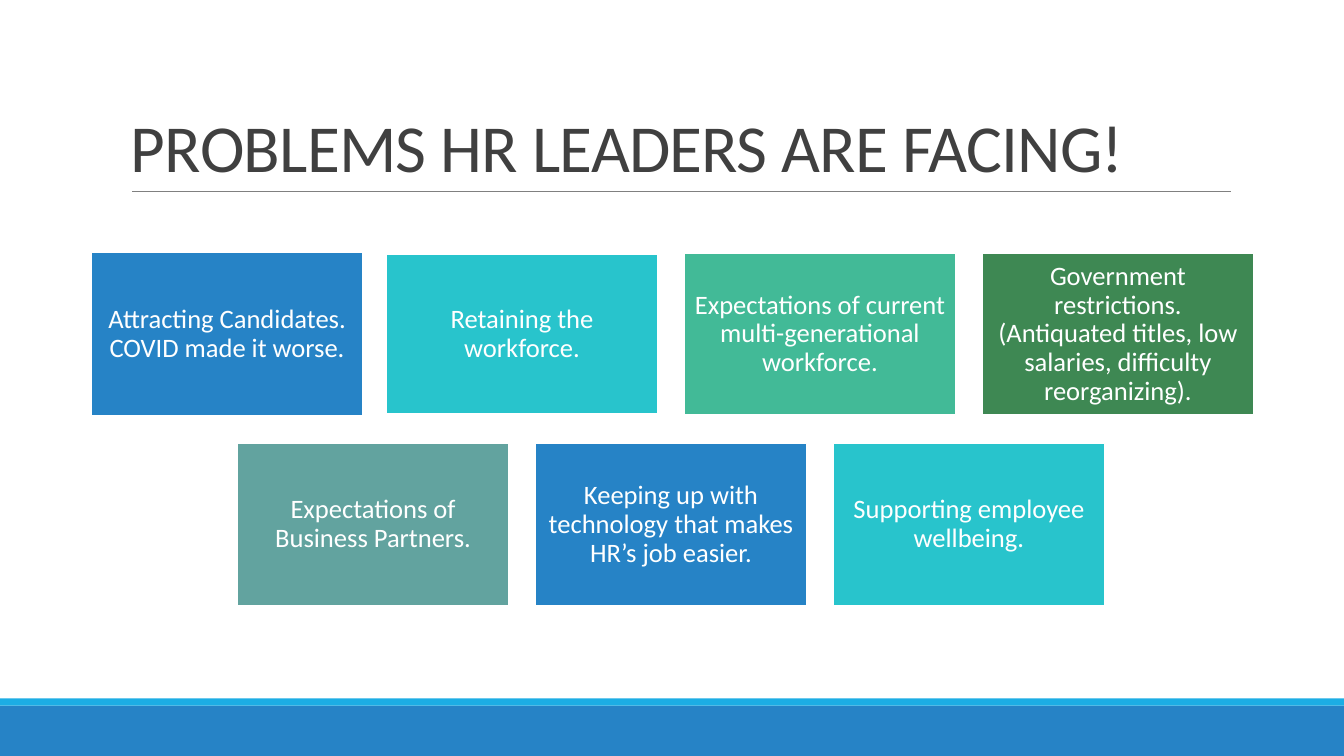
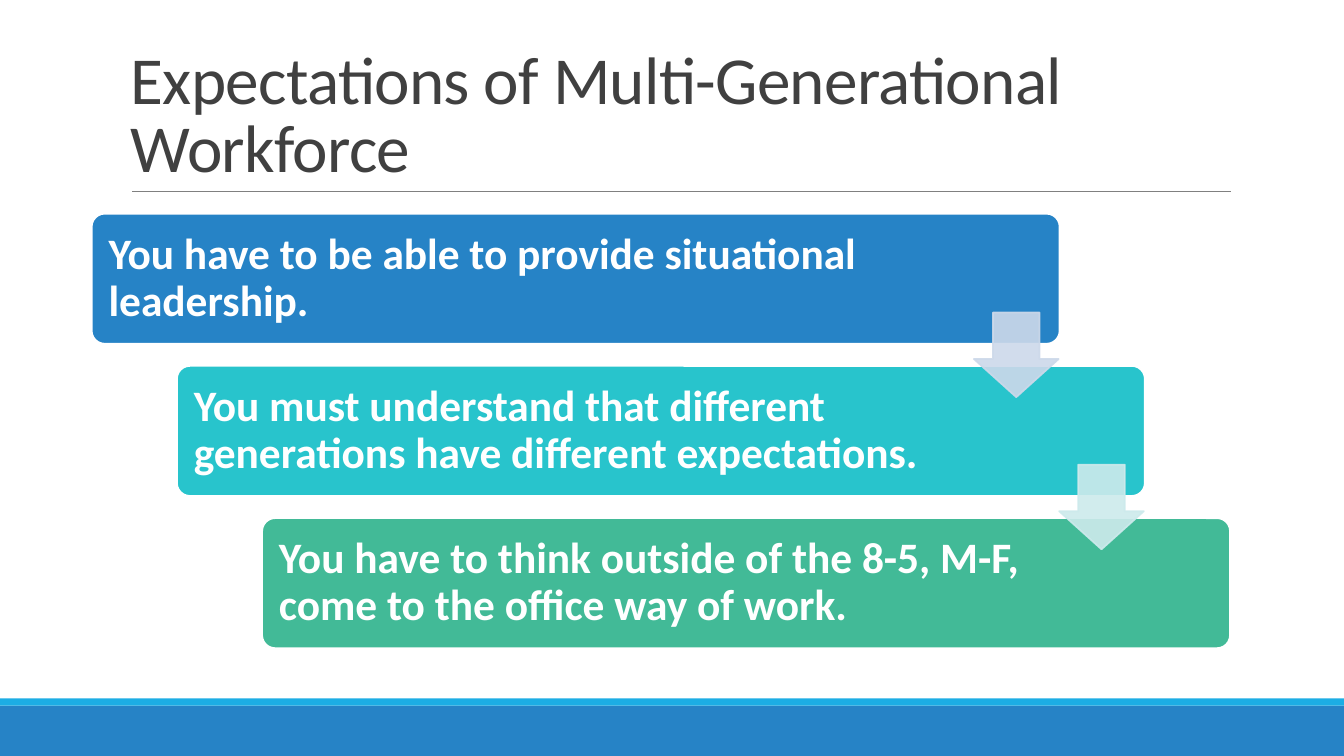
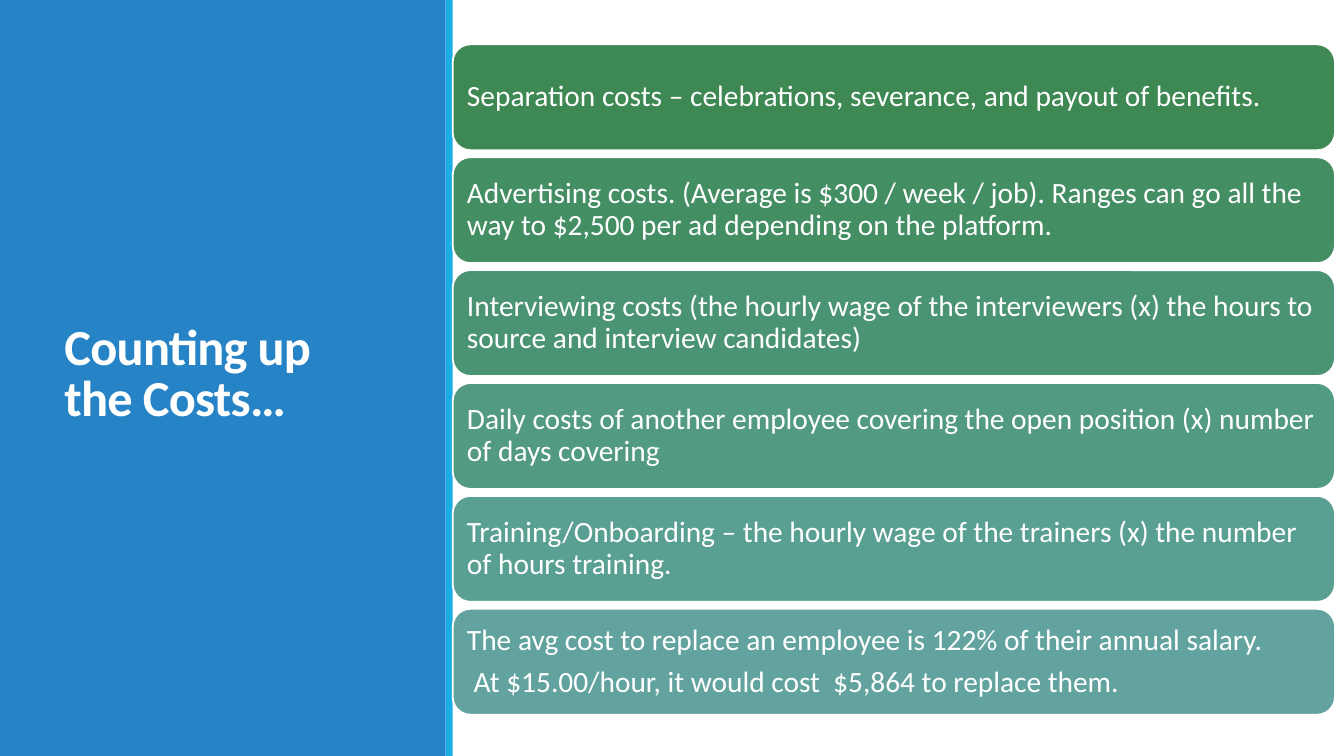
from lxml import etree
from pptx import Presentation
from pptx.dml.color import RGBColor
from pptx.enum import shapes, text
from pptx.oxml import ns
from pptx.util import Inches, Pt

# Shared look
WIDTH, HEIGHT = 13.33, 7.5
FONT = "Calibri"
COLORS = {
    "white": "FFFFFF", "title": "404040", "rule": "808080",
    "blue": "2683C6", "sky": "1CADE4", "teal": "28C4CC",
    "mint": "42BA97", "green": "3E8853", "sage": "62A39F",
    "green 2": "448E63", "green 3": "4B9473", "green 4": "529A83",
    "green 5": "599F92", "pale blue": "CDD9EA", "pale teal": "CDEAEC",
}
STRIPE = 0.07
SHAPE = shapes.MSO_SHAPE
MIDDLE, BOTTOM = text.MSO_ANCHOR.MIDDLE, text.MSO_ANCHOR.BOTTOM
CENTER, LEFT = text.PP_ALIGN.CENTER, text.PP_ALIGN.LEFT

# Content
PROBLEMS_TITLE = "PROBLEMS HR LEADERS ARE FACING!"
PROBLEM_ROWS = [  # row centre, then cards: text, colour, height, shift to the right
    (3.315, [
        ("Attracting Candidates. COVID made it worse.", "blue", 1.63, 0.03),
        ("Retaining the workforce.", "teal", 1.58, 0),
        ("Expectations of current multi-generational workforce.", "mint", 1.61, 0),
        ("Government restrictions. (Antiquated titles, low salaries, "
         "difficulty reorganizing).", "green", 1.61, 0),
    ]),
    (5.205, [
        ("Expectations of Business Partners.", "sage", 1.61, 0),
        ("Keeping up with technology that makes HR’s job easier.", "blue", 1.61, 0),
        ("Supporting employee wellbeing.", "teal", 1.61, 0),
    ]),
]

EXPECTATIONS_TITLE = "Expectations of Multi-Generational Workforce"
EXPECTATIONS = [  # text, colour, right margin, colour of the arrow to the next step
    ("You have to be able to provide situational leadership.",
     "blue", 1.45, "pale blue"),
    ("You must understand that different generations have different expectations.",
     "teal", 1.83, "pale teal"),
    ("You have to think outside of the 8-5, M-F, come to the office way of work.",
     "mint", 1.83, None),
]

COSTS_TITLE = "Counting up the Costs…"
COSTS = [
    ("Separation costs – celebrations, severance, and payout of benefits.", "green"),
    ("Advertising costs. (Average is $300 / week / job). Ranges can go all the way "
     "to $2,500 per ad depending on the platform.", "green 2"),
    ("Interviewing costs (the hourly wage of the interviewers (x) the hours to "
     "source and interview candidates)", "green 3"),
    ("Daily costs of another employee covering the open position (x) number of "
     "days covering", "green 4"),
    ("Training/Onboarding – the hourly wage of the trainers (x) the number of "
     "hours training.", "green 5"),
    ("The avg cost to replace an employee is 122% of their annual salary.\n"
     " At $15.00/hour, it would cost  $5,864 to replace them.", "sage"),
]


def rgb(color):
    return RGBColor.from_string(COLORS[color])


def write(holder, words, size, color="white", bold=False, align=LEFT, anchor=MIDDLE,
          margins=(0.1, 0.05, 0.1, 0.05), leading=0.9, after=0.35, tracking=0):
    """Fill a shape or text box; after is a share of the text size."""
    frame = holder.text_frame
    frame.word_wrap = True
    frame.vertical_anchor = anchor
    (frame.margin_left, frame.margin_top,
     frame.margin_right, frame.margin_bottom) = map(Inches, margins)
    for i, line in enumerate(words.split("\n")):
        paragraph = frame.add_paragraph() if i else frame.paragraphs[0]
        paragraph.alignment = align
        paragraph.line_spacing = leading
        paragraph.space_after = Pt(size * after)
        run = paragraph.add_run()
        run.text = line
        run.font.name, run.font.size, run.font.bold = FONT, Pt(size), bold
        run.font.color.rgb = rgb(color)
        if tracking:
            run.font._element.set("spc", str(round(tracking * 100)))


def block(slide, kind, box, fill, outline=None, adjust=(), opacity=None):
    part = slide.shapes.add_shape(kind, *map(Inches, box))
    part.shadow.inherit = False
    for i, value in enumerate(adjust):
        part.adjustments[i] = value
    part.fill.solid()
    part.fill.fore_color.rgb = rgb(fill)
    if outline:
        part.line.color.rgb = rgb(outline)
        part.line.width = Pt(1.25)
    else:
        part.line.fill.background()
    if opacity:
        for color in part._element.spPr.iter(ns.qn("a:srgbClr")):
            etree.SubElement(color, ns.qn("a:alpha"), val=str(opacity * 1000))
    return part


def add_title(slide, words, box, size, **style):
    holder = slide.shapes.add_textbox(*map(Inches, box))
    write(holder, words, size, leading=0.85, after=0, tracking=-0.5, **style)


def banded_slide(deck, title):
    slide = deck.slides.add_slide(deck.slide_layouts[6])
    block(slide, SHAPE.RECTANGLE, (0, 7, WIDTH, 0.5), "blue")
    block(slide, SHAPE.RECTANGLE, (0, 7 - STRIPE, WIDTH, STRIPE), "sky")
    rule = slide.shapes.add_connector(
        shapes.MSO_CONNECTOR.STRAIGHT, *map(Inches, (1.31, 1.9, 12.21, 1.9)))
    rule.line.color.rgb = rgb("rule")
    rule.line.width = Pt(0.5)
    etree.SubElement(rule._element.spPr, ns.qn("a:effectLst"))
    add_title(slide, title, (1.2, 0.31, 11, 1.59), 48, color="title", anchor=BOTTOM)
    return slide


def problems_slide(deck):
    slide = banded_slide(deck, PROBLEMS_TITLE)
    card_width, pitch, center = 2.69, 2.955, 6.655
    for middle, cards in PROBLEM_ROWS:
        row_left = center - (card_width + pitch * (len(cards) - 1)) / 2
        for column, (words, color, height, shift) in enumerate(cards):
            box = (row_left + column * pitch + shift, middle - height / 2,
                   card_width, height)
            card = block(slide, SHAPE.RECTANGLE, box, color, "white")
            write(card, words, 19, align=CENTER, margins=(0.08,) * 4)


def expectations_slide(deck):
    slide = banded_slide(deck, EXPECTATIONS_TITLE)
    width, height, arrow = 9.6, 1.29, 0.84
    corners = [(0.91 + 0.845 * i, 2.12 + 1.51 * i) for i in range(len(EXPECTATIONS))]
    for (left, top), (words, color, right, _) in zip(corners, EXPECTATIONS):
        step = block(slide, SHAPE.ROUNDED_RECTANGLE, (left, top, width, height),
                     color, "white", adjust=[0.1])
        write(step, words, 31, bold=True, margins=(0.13, 0.13, right, 0.13))
    # Arrows lie over both steps they link
    for (left, top), (*_, pale) in zip(corners, EXPECTATIONS):
        if pale:
            block(slide, SHAPE.DOWN_ARROW,
                  (left + width - arrow - 0.01, top + 0.98, arrow, arrow),
                  pale, pale, adjust=[0.55, 0.45], opacity=90)


def costs_slide(deck):
    slide = deck.slides.add_slide(deck.slide_layouts[6])
    panel = 4.42
    block(slide, SHAPE.RECTANGLE, (0, 0, panel, HEIGHT), "blue")
    add_title(slide, COSTS_TITLE, (0.54, 0.57, 3.37, 6.31), 36, bold=True)
    block(slide, SHAPE.RECTANGLE, (panel, 0, STRIPE, HEIGHT), "sky")
    for i, (words, color) in enumerate(COSTS):
        bar = block(slide, SHAPE.ROUNDED_RECTANGLE,
                    (panel + STRIPE, 0.44 + 1.12 * i, 8.75, 1.05), color, "white")
        write(bar, words, 21, margins=(0.09,) * 4)


def main():
    deck = Presentation()
    deck.slide_width, deck.slide_height = Inches(WIDTH), Inches(HEIGHT)
    for build in (problems_slide, expectations_slide, costs_slide):
        build(deck)
    deck.save("out.pptx")


if __name__ == "__main__":
    main()
